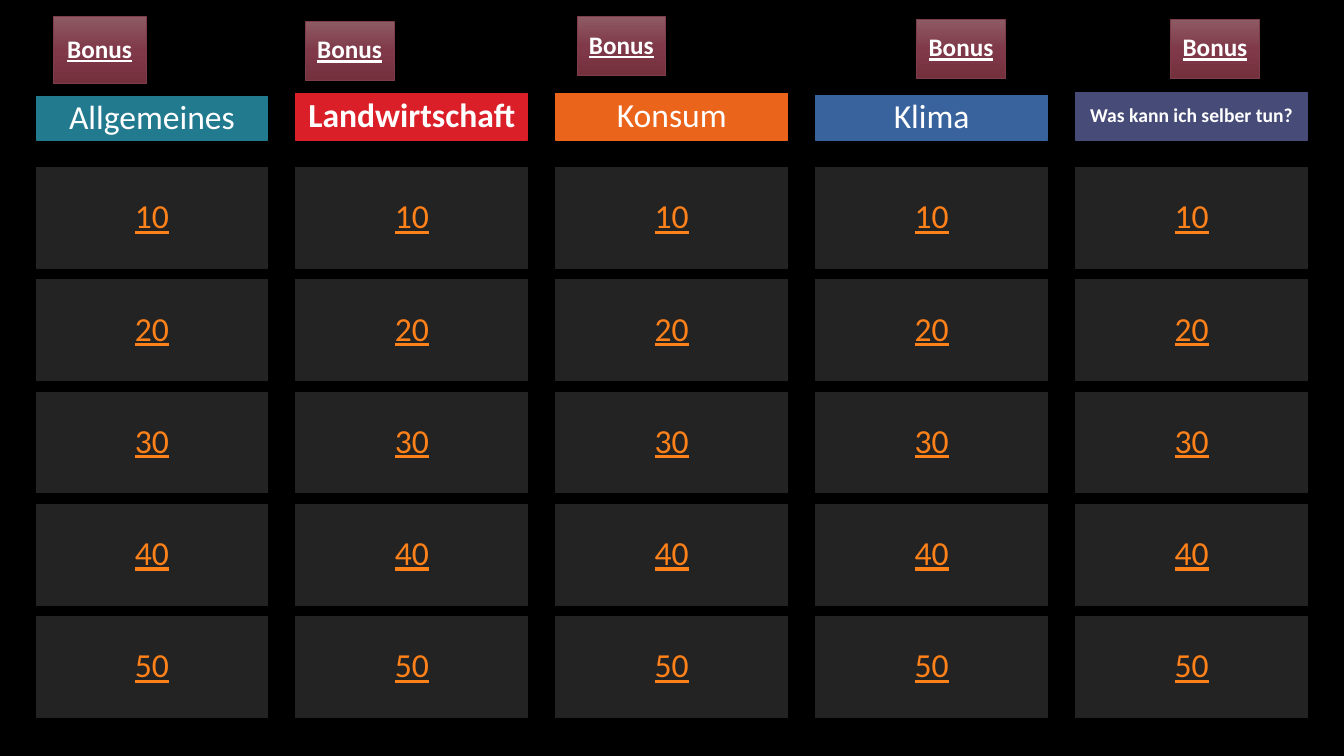
from copy import deepcopy
from dataclasses import dataclass

from pptx import Presentation
from pptx.dml.color import RGBColor
from pptx.enum.shapes import MSO_SHAPE
from pptx.enum.text import MSO_ANCHOR, PP_ALIGN
from pptx.oxml.ns import qn
from pptx.util import Cm, Pt

BLACK = RGBColor(0x00, 0x00, 0x00)
WHITE = RGBColor(0xFF, 0xFF, 0xFF)
CHARCOAL = RGBColor(0x23, 0x23, 0x23)
ORANGE = RGBColor(0xFF, 0x81, 0x19)
TEAL = RGBColor(0x22, 0x7A, 0x8F)
RED = RGBColor(0xDA, 0x1F, 0x28)
AMBER = RGBColor(0xEB, 0x64, 0x1B)
BLUE = RGBColor(0x39, 0x63, 0x9D)
INDIGO = RGBColor(0x47, 0x4B, 0x78)
BONUS_LINE = RGBColor(0x7D, 0x3C, 0x4A)
BONUS_GRADIENT = (
    (0, RGBColor(0x8D, 0x5B, 0x64)),
    (0.5, RGBColor(0x80, 0x39, 0x48)),
    (1, RGBColor(0x75, 0x30, 0x3E)),
)

# Lengths in centimetres
BOARD_LEFT, COLUMN_WIDTH, COLUMN_PITCH = 0.91, 5.84, 6.55
HEADER_BOTTOM = 3.53
POINTS_TOP, POINTS_HEIGHT, POINTS_PITCH = 4.22, 2.54, 2.83
POINTS = (10, 20, 30, 40, 50)

HEADER_FONT = {"size": Pt(24)}
BOLD_HEADER_FONT = {"size": Pt(24), "bold": True}
SMALL_HEADER_FONT = {"size": Pt(14), "bold": True}
POINTS_FONT = {"size": Pt(24), "underline": True}
BONUS_FONT = {"size": Pt(18), "bold": True, "underline": True}


@dataclass
class Category:
    """A column; the bonus box is left (from the column edge), top, width, height."""
    title: str
    color: RGBColor
    header_height: float
    header_font: dict
    bonus_box: tuple


CATEGORIES = (
    Category("Allgemeines", TEAL, 1.09, HEADER_FONT, (0.43, 0.41, 2.34, 1.7)),
    Category("Landwirtschaft", RED, 1.17, BOLD_HEADER_FONT, (0.23, 0.53, 2.24, 1.5)),
    Category("Konsum", AMBER, 1.17, HEADER_FONT, (0.53, 0.41, 2.24, 1.5)),
    Category("Klima", BLUE, 1.12, HEADER_FONT, (2.54, 0.48, 2.24, 1.5)),
    Category("Was kann ich selber tun?", INDIGO, 1.19, SMALL_HEADER_FONT,
             (2.39, 0.48, 2.24, 1.5)),
)


def add_label(slide, preset, box, text, color, font_format):
    """Add a shape with one centred line of text and no shadow."""
    label = slide.shapes.add_shape(preset, *map(Cm, box))
    label.shadow.inherit = False
    frame = label.text_frame
    frame.word_wrap = True
    frame.vertical_anchor = MSO_ANCHOR.MIDDLE
    line = frame.paragraphs[0]
    line.alignment = PP_ALIGN.CENTER
    line.line_spacing = 0.9
    run = line.add_run()
    run.text = text
    run.font.name = "Calibri"
    run.font.color.rgb = color
    for attribute, value in font_format.items():
        setattr(run.font, attribute, value)
    return label


def add_tile(slide, box, text, fill_color, text_color, font_format):
    tile = add_label(slide, MSO_SHAPE.RECTANGLE, box, text, text_color, font_format)
    tile.fill.solid()
    tile.fill.fore_color.rgb = fill_color
    tile.line.color.rgb = fill_color
    tile.line.width = Pt(0.75)


def add_bonus_button(slide, box):
    button = add_label(slide, MSO_SHAPE.ACTION_BUTTON_CUSTOM, box, "Bonus",
                       WHITE, BONUS_FONT)
    button.line.color.rgb = BONUS_LINE
    button.line.width = Pt(0.5)
    button.fill.gradient()
    button.fill.gradient_angle = 270
    stop_list = button._element.spPr.find(".//" + qn("a:gsLst"))
    stop_list.insert(1, deepcopy(stop_list[0]))
    for stop, (position, color) in zip(button.fill.gradient_stops, BONUS_GRADIENT):
        stop.position = position
        stop.color.rgb = color


def add_category_column(slide, category, left, width):
    height = category.header_height
    add_tile(slide, (left, HEADER_BOTTOM - height, width, height), category.title,
             category.color, WHITE, category.header_font)
    for row, points in enumerate(POINTS):
        top = POINTS_TOP + row * POINTS_PITCH
        add_tile(slide, (left, top, width, POINTS_HEIGHT), str(points),
                 CHARCOAL, ORANGE, POINTS_FONT)
    offset, *bonus_rest = category.bonus_box
    add_bonus_button(slide, (left + offset, *bonus_rest))


def add_quiz_board(presentation):
    slide = presentation.slides.add_slide(presentation.slide_layouts[6])
    slide.background.fill.solid()
    slide.background.fill.fore_color.rgb = BLACK
    for column, category in enumerate(CATEGORIES):
        add_category_column(slide, category, BOARD_LEFT + column * COLUMN_PITCH,
                            COLUMN_WIDTH)


def main():
    presentation = Presentation()
    presentation.slide_width = Cm(33.87)
    presentation.slide_height = Cm(19.05)
    add_quiz_board(presentation)
    presentation.save("out.pptx")


if __name__ == "__main__":
    main()
